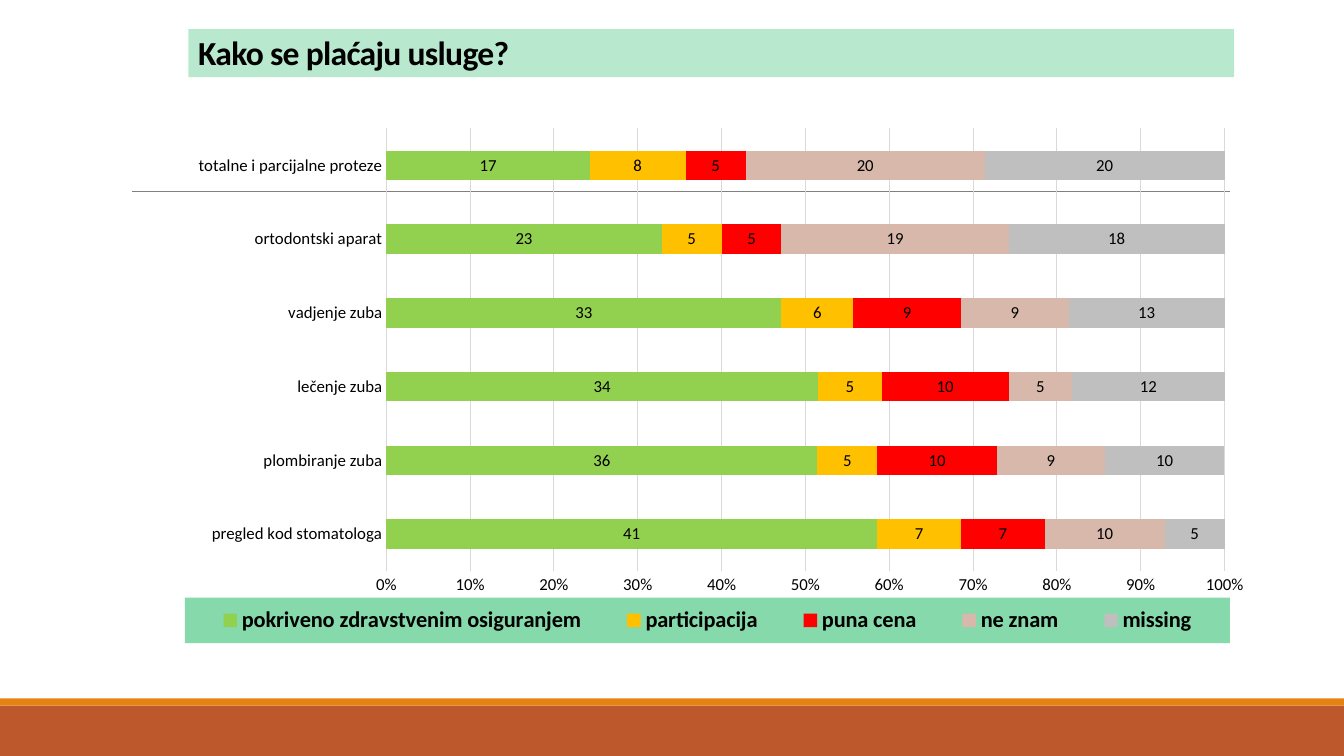
from lxml import etree
from pptx import Presentation
from pptx.chart.data import CategoryChartData
from pptx.dml.color import RGBColor
from pptx.enum.chart import XL_CHART_TYPE, XL_LABEL_POSITION, XL_LEGEND_POSITION, XL_TICK_MARK
from pptx.enum.shapes import MSO_CONNECTOR, MSO_SHAPE
from pptx.enum.text import MSO_ANCHOR, PP_ALIGN
from pptx.oxml import parse_xml
from pptx.oxml.ns import nsdecls, qn
from pptx.util import Pt

BLACK = RGBColor(0x00, 0x00, 0x00)
GREEN = RGBColor(0x00, 0xB0, 0x50)
RUST = RGBColor(0xBD, 0x58, 0x2C)
ORANGE = RGBColor(0xE4, 0x83, 0x12)
RULE_GRAY = RGBColor(0x80, 0x80, 0x80)
GRID_GRAY = RGBColor(0xD9, 0xD9, 0xD9)
LIME = RGBColor(0x92, 0xD0, 0x50)
AMBER = RGBColor(0xFF, 0xC0, 0x00)
RED = RGBColor(0xFF, 0x00, 0x00)
TAN = RGBColor(0xD7, 0xB8, 0xAB)
SILVER = RGBColor(0xBF, 0xBF, 0xBF)

SERVICES = ["pregled kod stomatologa", "plombiranje zuba", "lečenje zuba",
            "vadjenje zuba", "ortodontski aparat", "totalne i parcijalne proteze"]
PAYMENTS = [
    ("pokriveno zdravstvenim osiguranjem", (41, 36, 34, 33, 23, 17), LIME),
    ("participacija", (7, 5, 5, 6, 5, 8), AMBER),
    ("puna cena", (7, 10, 10, 9, 5, 5), RED),
    ("ne znam", (10, 9, 5, 9, 19, 20), TAN),
    ("missing", (5, 10, 12, 13, 18, 20), SILVER),
]


class SlideBuilder:
    """Draws styled elements on the current slide, with lengths in points."""

    def __init__(self, s, font="Calibri"):
        self.s = s
        self.font = font

    def style(self, f, size, bold=False):
        f.name, f.size, f.bold = self.font, Pt(size), bold
        f.color.rgb = BLACK

    def alpha(self, fill_owner, percent):
        clr = next(fill_owner.iter(qn("a:srgbClr")))
        etree.SubElement(clr, qn("a:alpha")).set("val", str(percent * 1000))

    def rect(self, x, y, w, h, color):
        sp = self.s.shapes.add_shape(MSO_SHAPE.RECTANGLE, Pt(x), Pt(y), Pt(w), Pt(h))
        sp.shadow.inherit = False
        sp.fill.solid()
        sp.fill.fore_color.rgb = color
        sp.line.fill.background()
        return sp

    def rule(self, x1, x2, y):
        ln = self.s.shapes.add_connector(MSO_CONNECTOR.STRAIGHT, Pt(x1), Pt(y), Pt(x2), Pt(y))
        ln.line.color.rgb = RULE_GRAY
        ln.line.width = Pt(0.5)
        etree.SubElement(ln._element.spPr, qn("a:effectLst"))

    def title(self, text, x, y, w, h):
        sp = self.rect(x, y, w, h, GREEN)
        self.alpha(sp._element.spPr, 28)
        tf = sp.text_frame
        tf.word_wrap = True
        tf.vertical_anchor = MSO_ANCHOR.BOTTOM
        p = tf.paragraphs[0]
        p.alignment = PP_ALIGN.LEFT
        p.line_spacing = 0.85
        r = p.add_run()
        r.text = text
        self.style(r.font, 24, True)
        r.font._element.set("spc", "-50")

    def layout(self, x, y, w, h, inner=False):
        target = '<c:layoutTarget val="inner"/>' if inner else ""
        modes = '<c:xMode val="edge"/><c:yMode val="edge"/>'
        sizes = "".join(f'<c:{k} val="{v}"/>' for k, v in zip("xywh", (x, y, w, h)))
        return parse_xml(f'<c:layout {nsdecls("c")}><c:manualLayout>{target}{modes}{sizes}'
                         '</c:manualLayout></c:layout>')

    def place(self, parent, index, layout):
        for old in parent.findall(qn("c:layout")):
            parent.remove(old)
        parent.insert(index, layout)

    def legend(self, chart):
        chart.has_legend = True
        legend = chart.legend
        legend.position = XL_LEGEND_POSITION.BOTTOM
        legend.include_in_layout = False
        self.style(legend.font, 16, True)
        el = legend._element
        self.place(el, 1, self.layout(0.005, 0.9, 0.96, 0.085))
        box = parse_xml(f'<c:spPr {nsdecls("c", "a")}><a:solidFill><a:srgbClr val="{GREEN}"/>'
                        '</a:solidFill><a:ln><a:noFill/></a:ln></c:spPr>')
        self.alpha(box, 48)
        el.find(qn("c:overlay")).addnext(box)

    def axes(self, chart):
        for axis in (chart.category_axis, chart.value_axis):
            axis.major_tick_mark = axis.minor_tick_mark = XL_TICK_MARK.NONE
            self.style(axis.tick_labels.font, 12)
        cat, val = chart.category_axis, chart.value_axis
        val.has_major_gridlines = True
        for line in (cat.format.line, val.major_gridlines.format.line):
            line.color.rgb = GRID_GRAY
            line.width = Pt(0.75)
        val.format.line.fill.background()
        val.minimum_scale, val.maximum_scale, val.major_unit = 0, 1, 0.1
        val.tick_labels.number_format = "0%"
        val.tick_labels.number_format_is_linked = False

    def stacked_bars(self, x, y, w, h, categories, series):
        data = CategoryChartData()
        data.categories = categories
        for name, values, _ in series:
            data.add_series(name, values)
        chart = self.s.shapes.add_chart(XL_CHART_TYPE.BAR_STACKED_100, Pt(x), Pt(y),
                                        Pt(w), Pt(h), data).chart
        chart.has_title = False
        self.style(chart.font, 10)
        plot = chart.plots[0]
        plot.gap_width, plot.overlap, plot.vary_by_categories = 150, 100, False
        for ser, (_, _, color) in zip(plot.series, series):
            ser.format.fill.solid()
            ser.format.fill.fore_color.rgb = color
            labels = ser.data_labels
            labels.show_value = True
            labels.position = XL_LABEL_POSITION.CENTER
            self.style(labels.font, 12)
        self.axes(chart)
        self.legend(chart)
        area = next(chart._chartSpace.iter(qn("c:plotArea")))
        self.place(area, 0, self.layout(0.19, 0.02, 0.77, 0.83, inner=True))


def main():
    prs = Presentation()
    prs.slide_width, prs.slide_height = Pt(960), Pt(540)
    b = SlideBuilder(prs.slides.add_slide(prs.slide_layouts[6]))
    b.rect(0, 504, 960, 36, RUST)
    b.rect(0, 498.75, 960, 5.25, ORANGE)
    b.rule(94.3, 878.4, 136.8)
    b.title("Kako se plaćaju usluge?", 134.5, 20.8, 747, 34.4)
    b.stacked_bars(128.2, 84.2, 777.6, 380.9, SERVICES, PAYMENTS)
    prs.save("out.pptx")


if __name__ == "__main__":
    main()
